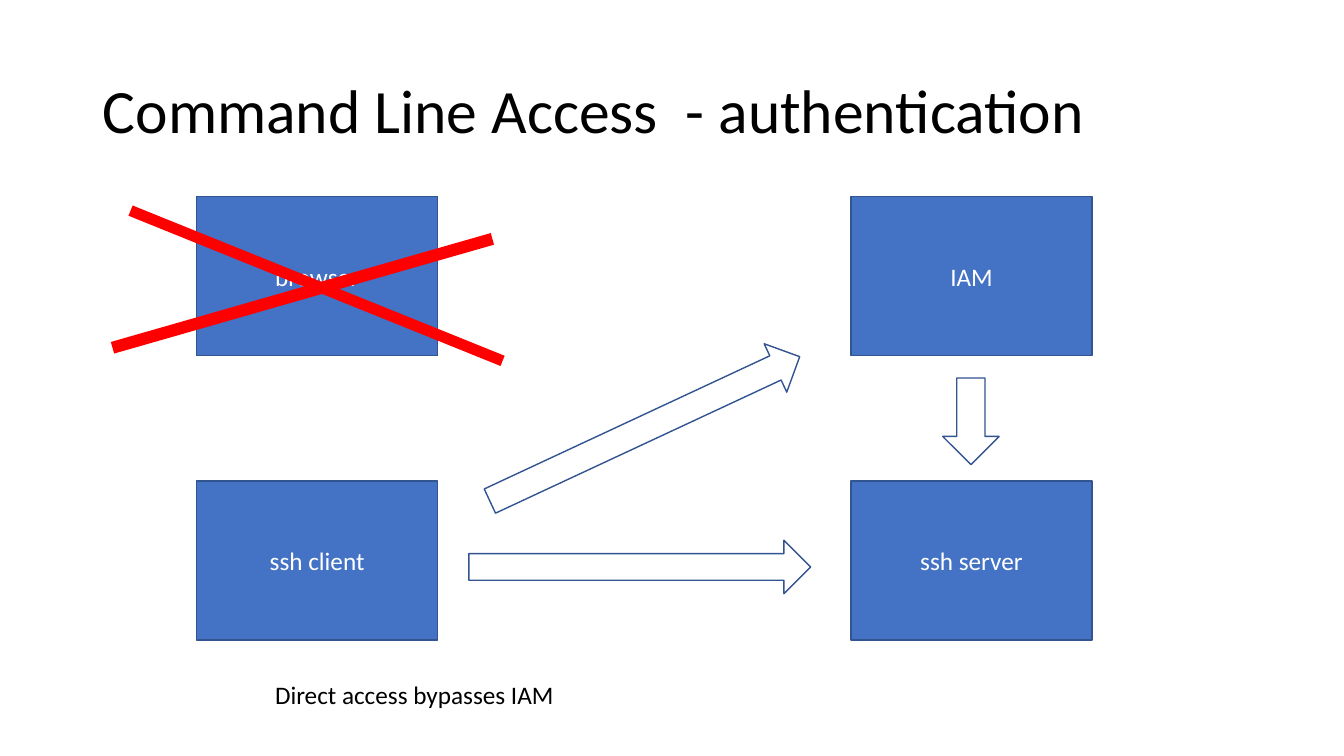
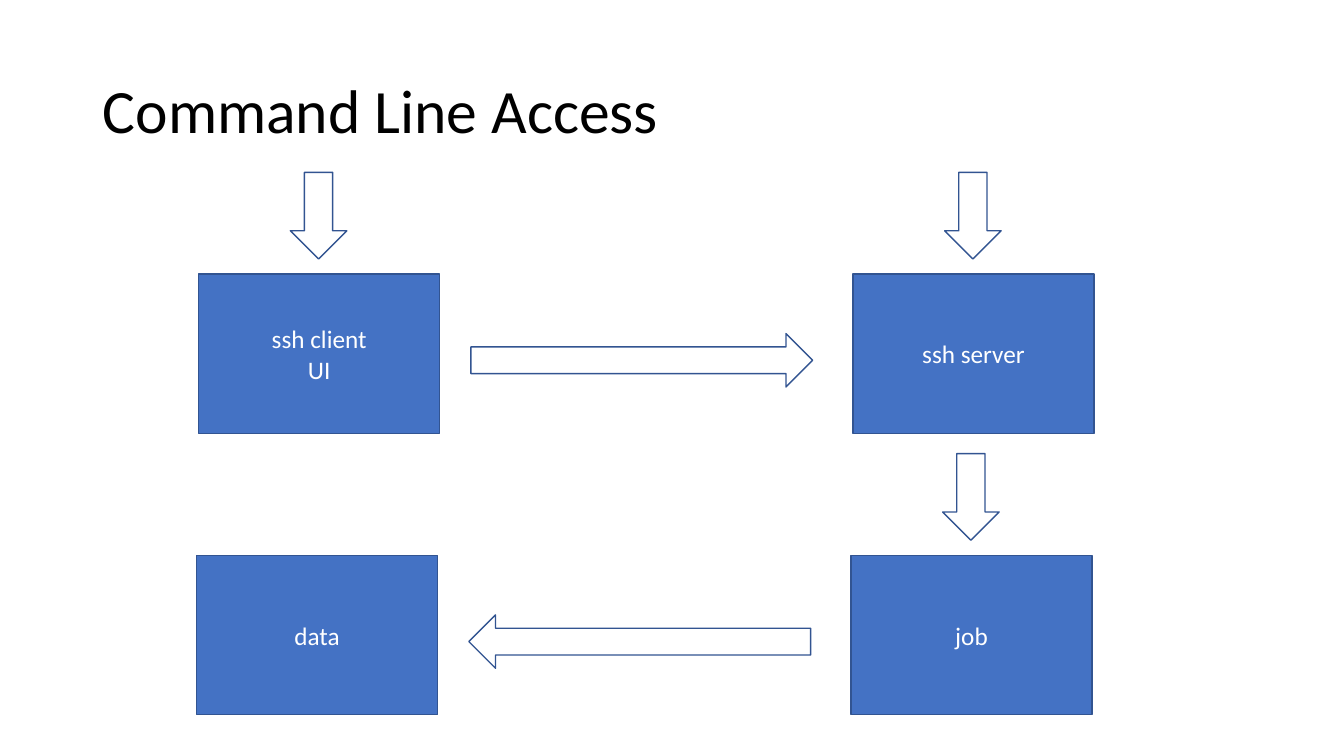
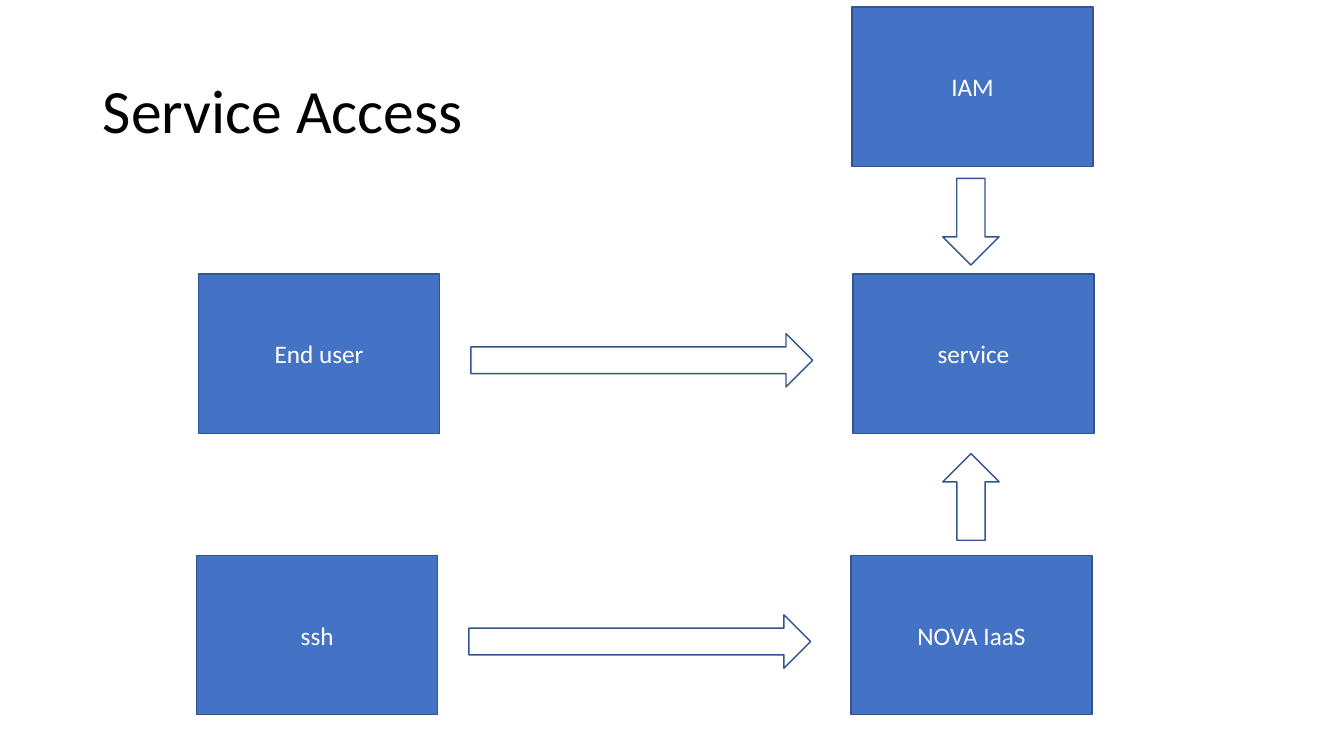
from pptx import Presentation
from pptx.dml.color import RGBColor
from pptx.enum.shapes import MSO_SHAPE
from pptx.enum.text import MSO_ANCHOR, MSO_AUTO_SIZE, PP_ALIGN
from pptx.util import Pt

# Scale: 100 px to the inch
PX = 9144

# Shared style
BLUE = RGBColor(0x44, 0x72, 0xC4)
OUTLINE = RGBColor(0x32, 0x54, 0x91)
RED = RGBColor(0xFF, 0x00, 0x00)
WHITE = RGBColor(0xFF, 0xFF, 0xFF)
BLACK = RGBColor(0x00, 0x00, 0x00)
FONT = "Calibri"
TITLE_SIZE, TEXT_SIZE = 44, 18
LEFT, CENTER = PP_ALIGN.LEFT, PP_ALIGN.CENTER
MIDDLE = MSO_ANCHOR.MIDDLE
GROW = MSO_AUTO_SIZE.SHAPE_TO_FIT_TEXT
NO_FIT = MSO_AUTO_SIZE.NONE
RECTANGLE = MSO_SHAPE.RECTANGLE
RIGHT_ARROW, DOWN_ARROW = MSO_SHAPE.RIGHT_ARROW, MSO_SHAPE.DOWN_ARROW
TITLE_ONLY = 5

# Diagram grid, in px
BOX_SIZE = (239, 158)
ARROW_SIZES = {RIGHT_ARROW: (339, 53), DOWN_ARROW: (56, 86)}
COLUMN_STEP = 649
ROW_ARROW_OFFSET = (270, 59)


def px(*lengths):
    return [length * PX for length in lengths]


def set_text(frame, text, size, color, align):
    frame.text = text
    for para in frame.paragraphs:
        para.alignment = align
        for run in para.runs:
            run.font.name = FONT
            run.font.size = Pt(size)
            run.font.color.rgb = color


def add_slide(deck, title):
    page = deck.slides.add_slide(deck.slide_layouts[TITLE_ONLY])
    box = page.shapes.title
    box.left, box.top, box.width, box.height = px(92, 40, 1150, 145)
    frame = box.text_frame
    set_text(frame, title, TITLE_SIZE, BLACK, LEFT)
    frame.auto_size = NO_FIT
    frame.vertical_anchor = MIDDLE
    frame.paragraphs[0].line_spacing = 0.9
    return page


def add_figure(page, kind, left, top, size, fill, outline=OUTLINE, rotation=0):
    figure = page.shapes.add_shape(kind, *px(left, top, *size))
    figure.shadow.inherit = False
    figure.rotation = rotation
    figure.fill.solid()
    figure.fill.fore_color.rgb = fill
    if outline is None:
        figure.line.fill.background()
    else:
        figure.line.color.rgb = outline
        figure.line.width = Pt(1)
    return figure


def add_box(page, left, top, label):
    box = add_figure(page, RECTANGLE, left, top, BOX_SIZE, BLUE)
    box.text_frame.vertical_anchor = MIDDLE
    set_text(box.text_frame, label, TEXT_SIZE, WHITE, CENTER)


def add_arrow(page, kind, left, top, rotation=0):
    add_figure(page, kind, left, top, ARROW_SIZES[kind], WHITE, rotation=rotation)


def add_row(page, left, top, labels, rotation=None):
    """Two boxes, with an arrow between them if a rotation is given."""
    for column, label in enumerate(labels):
        add_box(page, left + column * COLUMN_STEP, top, label)
    if rotation is not None:
        across, down = ROW_ARROW_OFFSET
        add_arrow(page, RIGHT_ARROW, left + across, top + down, rotation)


def add_caption(page, left, top, width, height, text):
    box = page.shapes.add_textbox(*px(left, top, width, height))
    box.text_frame.word_wrap = True
    box.text_frame.auto_size = GROW
    set_text(box.text_frame, text, TEXT_SIZE, BLACK, LEFT)


def build_authentication(deck):
    page = add_slide(deck, "Command Line Access  - authentication")
    add_row(page, 195, 195, ("browser", "IAM"))
    add_row(page, 195, 477, ("ssh client", "ssh server"), rotation=0)
    add_arrow(page, RIGHT_ARROW, 470, 399, rotation=335)
    add_arrow(page, DOWN_ARROW, 935, 375)
    # Cross over the browser
    add_figure(page, RECTANGLE, 115, 278, (398, 11), RED, None, rotation=22)
    add_figure(page, RECTANGLE, 104, 285, (392, 12), RED, None, rotation=344)
    add_caption(page, 263, 669, 300, 40, "Direct access bypasses IAM")


def build_command_line(deck):
    page = add_slide(deck, "Command Line Access")
    add_row(page, 197, 272, ("ssh client\nUI", "ssh server"), rotation=0)
    add_row(page, 195, 551, ("data", "job"), rotation=180)
    for left, top in ((288, 171), (937, 171), (935, 450)):
        add_arrow(page, DOWN_ARROW, left, top)


def build_service(deck):
    page = add_slide(deck, "Service Access")
    add_row(page, 197, 272, ("End user", "service"), rotation=0)
    add_row(page, 195, 551, ("ssh", "NOVA IaaS"), rotation=0)
    add_box(page, 845, 7, "IAM")
    add_arrow(page, DOWN_ARROW, 935, 177)
    add_arrow(page, DOWN_ARROW, 935, 450, rotation=180)


def main():
    deck = Presentation()
    deck.slide_width, deck.slide_height = px(1333, 750)
    build_authentication(deck)
    build_command_line(deck)
    build_service(deck)
    deck.save("out.pptx")


if __name__ == "__main__":
    main()
